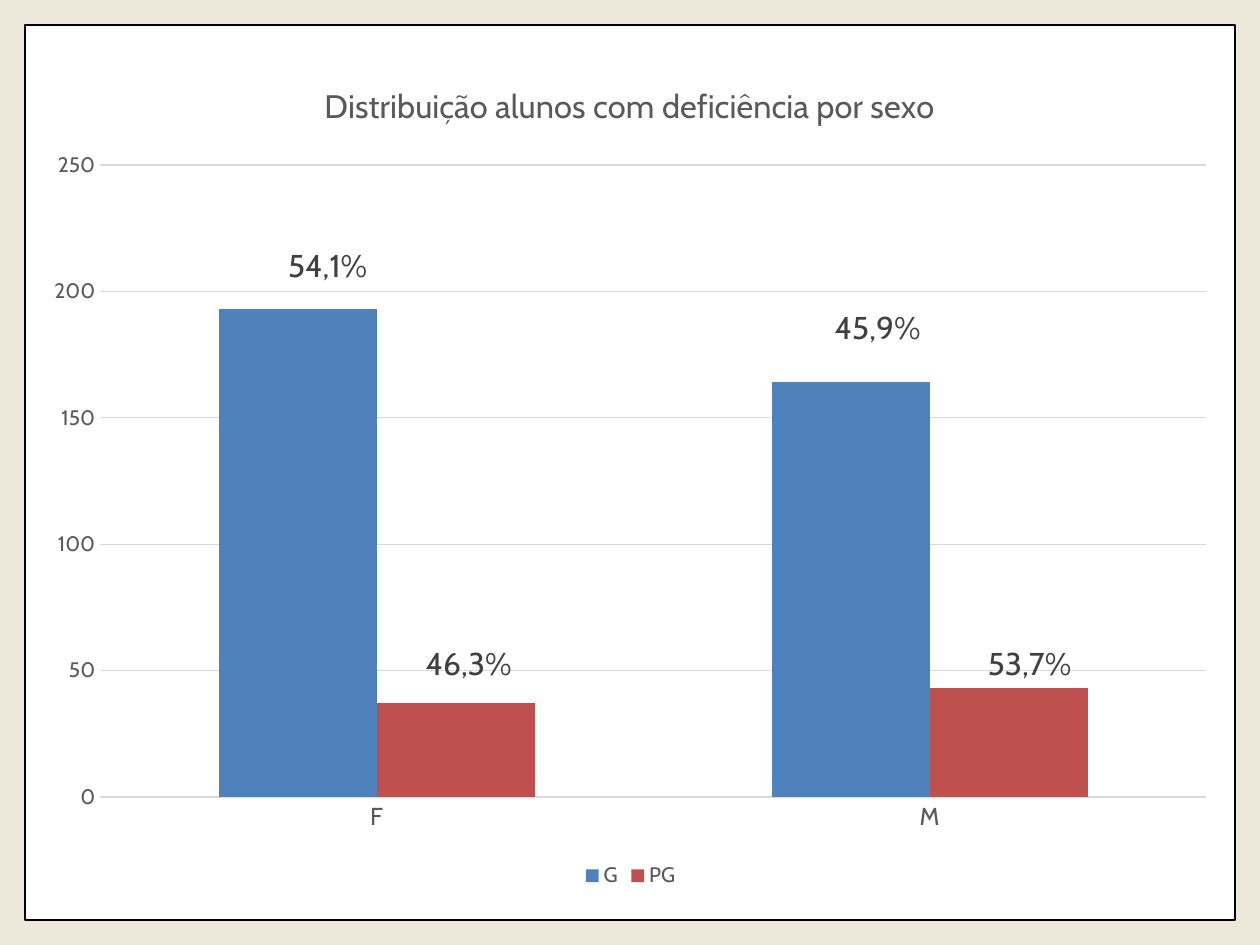
"""Build a slide with a column chart of students with disabilities by sex."""
from dataclasses import dataclass

from lxml.etree import SubElement
from pptx import Presentation
from pptx.chart.data import CategoryChartData
from pptx.dml.color import RGBColor
from pptx.enum.chart import XL_CHART_TYPE, XL_LABEL_POSITION, XL_LEGEND_POSITION, XL_TICK_MARK
from pptx.enum.shapes import MSO_SHAPE
from pptx.oxml.ns import qn
from pptx.util import Pt

FONT = "Cabin"
BEIGE = RGBColor(0xEC, 0xE9, 0xDB)
WHITE = RGBColor(0xFF, 0xFF, 0xFF)
BLACK = RGBColor(0x00, 0x00, 0x00)
GREY = RGBColor(0x59, 0x59, 0x59)
DARK_GREY = RGBColor(0x40, 0x40, 0x40)
GRID_GREY = RGBColor(0xD9, 0xD9, 0xD9)
BLUE = RGBColor(0x4F, 0x81, 0xBD)
RED = RGBColor(0xC0, 0x50, 0x4D)
CHART_WIDTH = Pt(686.16)
CHART_HEIGHT = Pt(479.52)


@dataclass
class Share:
    students: int
    percentage: str
    right: float
    down: float


@dataclass
class Level:
    name: str
    color: RGBColor
    shares: list[Share]


SEXES = ["F", "M"]
LEVELS = [
    Level("G", BLUE, [Share(193, "54,1%", 17.1, -10.7), Share(164, "45,9%", 15.4, -17.5)]),
    Level("PG", RED, [Share(37, "46,3%", 7.4, -8.5), Share(43, "53,7%", 12, 0)]),
]


def style_font(font, size: float, color: RGBColor) -> None:
    font.name = FONT
    font.size = Pt(size)
    font.bold = False
    font.color.rgb = color


def set_layout(parent, position: int, modes: dict[str, str], **lengths: float) -> None:
    for previous in parent.findall(qn("c:layout")):
        parent.remove(previous)
    layout = SubElement(parent, qn("c:layout"))
    manual = SubElement(layout, qn("c:manualLayout"))
    for key, mode in modes.items():
        SubElement(manual, qn(f"c:{key}")).set("val", mode)
    for key, length in lengths.items():
        whole = CHART_WIDTH if key in "xw" else CHART_HEIGHT
        SubElement(manual, qn(f"c:{key}")).set("val", str(Pt(length) / whole))
    parent.insert(position, layout)


def add_frame(slide) -> None:
    frame = slide.shapes.add_shape(MSO_SHAPE.RECTANGLE, Pt(14.4), Pt(14.4), Pt(691.2), Pt(511.2))
    frame.shadow.inherit = False
    frame.fill.solid()
    frame.fill.fore_color.rgb = WHITE
    frame.line.color.rgb = BLACK
    frame.line.width = Pt(1)


def style_axes(chart) -> None:
    for axis, size in ((chart.category_axis, 14), (chart.value_axis, 12)):
        axis.major_tick_mark = axis.minor_tick_mark = XL_TICK_MARK.NONE
        axis.format.line.fill.background()
        style_font(axis.tick_labels.font, size, GREY)
    scale = chart.value_axis
    scale.minimum_scale, scale.maximum_scale, scale.major_unit = 0, 250, 50
    scale.major_gridlines.format.line.color.rgb = GRID_GREY
    scale.major_gridlines.format.line.width = Pt(0.75)


def style_level(series, level: Level) -> None:
    series.format.fill.solid()
    series.format.fill.fore_color.rgb = level.color
    labels = series.data_labels
    labels.show_value = True
    labels.position = XL_LABEL_POSITION.OUTSIDE_END
    style_font(labels.font, 18, DARK_GREY)
    for leader_lines in labels._element.findall(qn("c:showLeaderLines")):
        leader_lines.set("val", "0")
    for index, share in enumerate(level.shares):
        label = series.points[index].data_label
        paragraph = label.text_frame.paragraphs[0]
        paragraph.text = share.percentage
        style_font(paragraph.font, 18, DARK_GREY)
        label.position = XL_LABEL_POSITION.OUTSIDE_END
    for element, share in zip(labels._element.findall(qn("c:dLbl")), level.shares):
        set_layout(element, 1, {}, x=share.right, y=share.down)


def add_students_chart(slide) -> None:
    students = CategoryChartData()
    students.categories = SEXES
    for level in LEVELS:
        students.add_series(level.name, [share.students for share in level.shares])
    chart = slide.shapes.add_chart(
        XL_CHART_TYPE.COLUMN_CLUSTERED, Pt(17.28), Pt(30.96), CHART_WIDTH, CHART_HEIGHT, students
    ).chart
    style_font(chart.font, 10, BLACK)
    style_axes(chart)

    chart.has_title = True
    heading = chart.chart_title.text_frame.paragraphs[0]
    heading.text = "Distribuição alunos com deficiência por sexo"
    style_font(heading.font, 18.6, GREY)
    edges = {"xMode": "edge", "yMode": "edge"}
    set_layout(chart.chart_title._element, 1, edges, x=164.7, y=12.9)

    chart.has_legend = True
    chart.legend.position = XL_LEGEND_POSITION.BOTTOM
    chart.legend.include_in_layout = False
    style_font(chart.legend.font, 12, GREY)

    plot = chart.plots[0]
    plot.gap_width = 150
    plot.overlap = 0
    plot.vary_by_categories = False
    for series, level in zip(plot.series, LEVELS):
        style_level(series, level)
    set_layout(chart._chartSpace.chart.plotArea, 0, {"layoutTarget": "inner", **edges},
               x=40, y=63.4, w=632, h=361.2)


def main() -> None:
    presentation = Presentation()
    presentation.slide_width, presentation.slide_height = Pt(720), Pt(540)
    slide = presentation.slides.add_slide(presentation.slide_layouts[6])
    slide.background.fill.solid()
    slide.background.fill.fore_color.rgb = BEIGE
    add_frame(slide)
    add_students_chart(slide)
    presentation.save("out.pptx")


if __name__ == "__main__":
    main()
